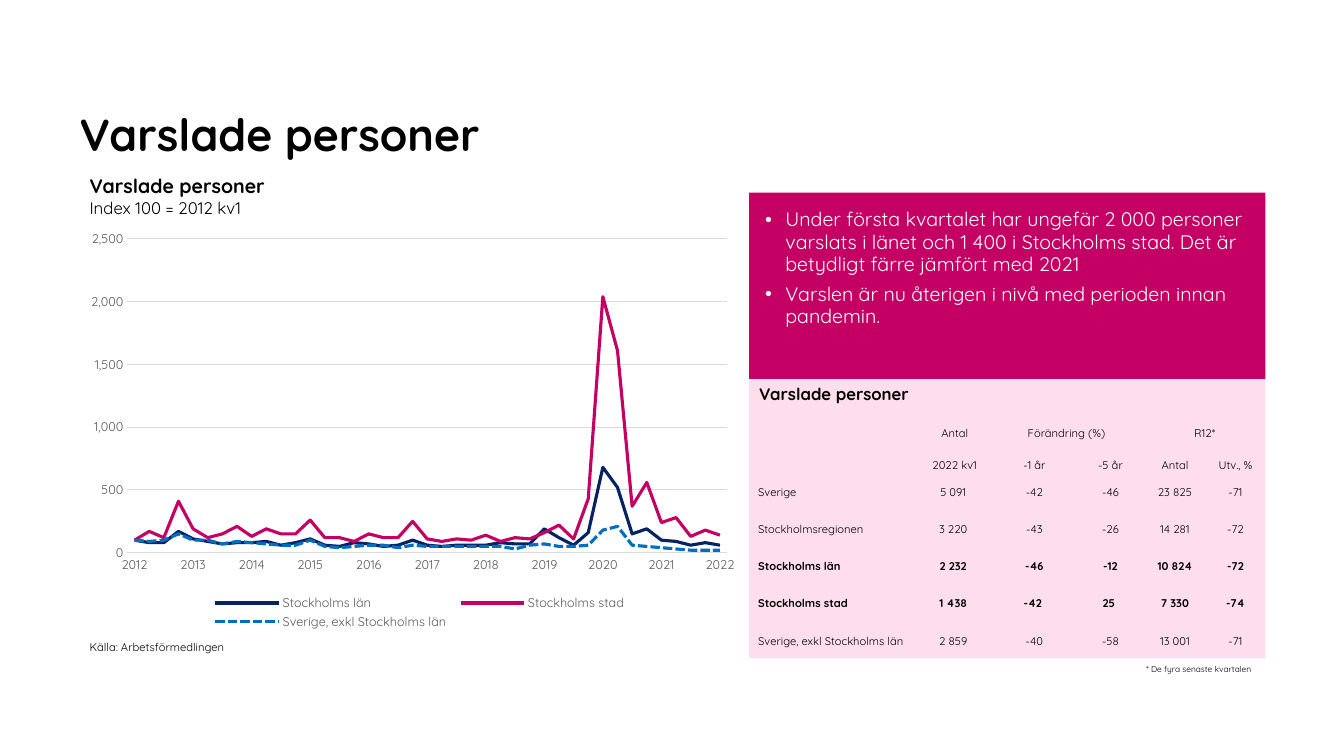
import pptx
import pptx.chart.data
import pptx.dml.color
import pptx.enum.chart
import pptx.enum.dml
import pptx.enum.shapes
import pptx.enum.text
import pptx.util
from lxml import etree
from pptx.oxml.ns import qn
from pptx.util import Inches

COLOURS = {
    "black": "000000", "white": "FFFFFF", "magenta": "C40064", "pink": "FEDEED",
    "navy": "052364", "blue": "006EBF", "grey": "595959", "grid": "D9D9D9",
}
NO_TABLE_STYLE = "{2D5ABB26-0587-4C30-8999-92F81FD0307C}"
ANCHOR = pptx.enum.text.MSO_ANCHOR


def rgb(name):
    return pptx.dml.color.RGBColor.from_string(COLOURS[name])


def add_layout(parent, index, **fractions):
    """Place a chart part by fractions of the chart's size."""
    layout = parent.find(qn("c:layout"))
    if layout is None:
        layout = etree.Element(qn("c:layout"))
        parent.insert(index, layout)
    manual = etree.SubElement(layout, qn("c:manualLayout"))
    if parent.tag == qn("c:plotArea"):
        etree.SubElement(manual, qn("c:layoutTarget"), val="inner")
    for mode in ("xMode", "yMode"):
        etree.SubElement(manual, qn("c:" + mode), val="edge")
    for key, value in fractions.items():
        etree.SubElement(manual, qn("c:" + key), val=str(value))


class SlideBuilder:
    font = "Quicksand"

    def __init__(self, slide):
        self.slide = slide

    def style(self, font, size, colour="black", bold=False):
        font.name, font.size, font.bold = self.font, pptx.util.Pt(size), bold
        font.color.rgb = rgb(colour)

    def run(self, paragraph, text, size, colour="black", bold=False):
        run = paragraph.add_run()
        run.text = text
        self.style(run.font, size, colour, bold)

    def text(self, box, lines, wrap=False, anchor=ANCHOR.TOP, inset=None):
        frame = self.slide.shapes.add_textbox(*map(Inches, box)).text_frame
        frame.word_wrap, frame.vertical_anchor = wrap, anchor
        if inset is not None:
            self.insets(frame, inset)
        paragraph = frame.paragraphs[0]
        for i, (text, size, bold) in enumerate(lines):
            if i:
                paragraph.add_line_break()
            self.run(paragraph, text, size, bold=bold)

    def insets(self, frame, inset):
        frame.margin_left = frame.margin_right = Inches(inset)
        frame.margin_top = frame.margin_bottom = Inches(inset)

    def panel(self, box, colour):
        panel = self.slide.shapes.add_shape(
            pptx.enum.shapes.MSO_SHAPE.RECTANGLE, *map(Inches, box))
        panel.shadow.inherit = False
        panel.fill.solid()
        panel.fill.fore_color.rgb = rgb(colour)
        panel.line.fill.background()
        return panel

    def bullets(self, panel, points, size, colour):
        frame = panel.text_frame
        frame.word_wrap, frame.vertical_anchor = True, ANCHOR.TOP
        self.insets(frame, 0.16)
        for i, point in enumerate(points):
            paragraph = frame.add_paragraph() if i else frame.paragraphs[0]
            paragraph.alignment = pptx.enum.text.PP_ALIGN.LEFT
            paragraph.line_spacing = 0.96
            if i:
                paragraph.space_before = pptx.util.Pt(5)
            properties = paragraph._p.get_or_add_pPr()
            properties.set("marL", str(Inches(0.2)))
            properties.set("indent", str(Inches(-0.2)))
            etree.SubElement(properties, qn("a:buFont"), typeface="Arial")
            etree.SubElement(properties, qn("a:buChar"), char="•")
            self.run(paragraph, point, size, colour)

    def table(self, box, widths, heights, rows, header_rows, bold_rows, spans):
        frame = self.slide.shapes.add_table(len(rows), len(widths), *map(Inches, box))
        table = frame.table
        table.first_row = table.horz_banding = False
        next(frame._element.iter(qn("a:tableStyleId"))).text = NO_TABLE_STYLE
        for column, width in zip(table.columns, widths):
            column.width = Inches(width)
        for row, height in zip(table.rows, heights):
            row.height = Inches(height)
        for r, row in enumerate(rows):
            for c, text in enumerate(row):
                cell = table.cell(r, c)
                cell.fill.background()
                cell.margin_left = cell.margin_right = cell.margin_top = Inches(0.01)
                cell.margin_bottom = 0
                cell.vertical_anchor = ANCHOR.BOTTOM if r < header_rows else ANCHOR.MIDDLE
                paragraph = cell.text_frame.paragraphs[0]
                if c:
                    paragraph.alignment = pptx.enum.text.PP_ALIGN.CENTER
                else:
                    paragraph._p.get_or_add_pPr().set("marL", str(Inches(0.08)))
                if text:
                    self.run(paragraph, text, 8, bold=r in bold_rows)
                else:
                    etree.SubElement(paragraph._p, qn("a:endParaRPr"), sz="800")
        for r, first, last in spans:
            table.cell(r, first).merge(table.cell(r, last))

    def line_chart(self, box, categories, series):
        data = pptx.chart.data.CategoryChartData(number_format="#,##0")
        data.categories = categories
        for name, _, _, values in series:
            data.add_series(name, values)
        chart = self.slide.shapes.add_chart(
            pptx.enum.chart.XL_CHART_TYPE.LINE, *map(Inches, box), data).chart
        self.style(chart.font, 10)
        chart.has_title = False
        chart.plots[0].vary_by_categories = False
        for line, (_, colour, dash, _) in zip(chart.plots[0].series, series):
            line.smooth = False
            line.marker.style = pptx.enum.chart.XL_MARKER_STYLE.NONE
            line.format.line.width = pptx.util.Pt(2.25)
            line.format.line.color.rgb = rgb(colour)
            if dash:
                line.format.line.dash_style = dash

        # Axes
        years, index = chart.category_axis, chart.value_axis
        for axis in (years, index):
            axis.major_tick_mark = axis.minor_tick_mark = pptx.enum.chart.XL_TICK_MARK.NONE
            self.style(axis.tick_labels.font, 9, "grey")
        next(years._element.iter(qn("a:bodyPr"))).set("rot", "-60000000")
        index.minimum_scale, index.maximum_scale, index.major_unit = 0, 2500, 500
        index.tick_labels.number_format = "#,##0"
        index.tick_labels.number_format_is_linked = False
        index.format.line.fill.background()
        for rule in (years.format.line, index.major_gridlines.format.line):
            rule.color.rgb = rgb("grid")
            rule.width = pptx.util.Pt(0.75)

        # Legend and placement
        chart.has_legend = True
        chart.legend.position = pptx.enum.chart.XL_LEGEND_POSITION.BOTTOM
        chart.legend.include_in_layout = False
        self.style(chart.legend.font, 9, "grey")
        plot_area = next(chart._chartSpace.iter(qn("c:plotArea")))
        add_layout(plot_area, 0, x=0.074, y=0.037, w=0.895, h=0.767)
        add_layout(chart.legend._element, 1, x=0.19, y=0.9, w=0.64, h=0.1)


def main():
    deck = pptx.Presentation()
    deck.slide_width, deck.slide_height = Inches(13.33), Inches(7.5)
    page = SlideBuilder(deck.slides.add_slide(deck.slide_layouts[6]))

    # Headings and source
    page.text((0.79, 0.37, 9.22, 1.22), [("Varslade personer", 32, True)],
              wrap=True, anchor=ANCHOR.BOTTOM, inset=0)
    page.text((0.79, 6.3, 1.64, 0.24), [("Källa: Arbetsförmedlingen", 8, False)])
    page.text((0.79, 1.68, 1.94, 0.54),
              [("Varslade personer", 14, True), ("Index 100 = 2012 kv1", 12, False)])

    # Key messages
    page.panel((7.43, 3.75, 5.12, 2.78), "pink")
    messages = page.panel((7.43, 1.91, 5.12, 1.85), "magenta")
    page.bullets(messages, [
        "Under första kvartalet har ungefär 2 000 personer varslats i länet och "
        "1 400 i Stockholms stad. Det är betydligt färre jämfört med 2021",
        "Varslen är nu återigen i nivå med perioden innan pandemin.",
    ], 14, "white")

    # Table
    page.text((7.43, 3.76, 1.69, 0.3), [("Varslade personer", 12, True)])
    page.text((11.27, 6.54, 1.29, 0.2), [("* De fyra senaste kvartalen", 6, False)])
    page.table((7.43, 4.06, 5.12, 2.47), [1.67, 0.74, 0.84, 0.67, 0.61, 0.59],
               [0.31, 0.32] + [0.37] * 5, [
        ["", "Antal", "Förändring (%) ", "", "R12*", ""],
        ["", "2022 kv1", "-1 år", "-5 år", "Antal", "Utv., %"],
        ["Sverige", "5 091 ", "-42", "-46", "23 825", "-71"],
        ["Stockholmsregionen", "3 220 ", "-43", "-26", "14 281", "-72"],
        ["Stockholms län", "2 232 ", "-46", "-12", "10 824", "-72"],
        ["Stockholms stad", "1 438 ", "-42 ", "25 ", "7 330", "-74"],
        ["Sverige, exkl Stockholms län", "2 859 ", "-40", "-58", "13 001", "-71"],
    ], header_rows=2, bold_rows=(4, 5), spans=[(0, 2, 3), (0, 4, 5)])

    # Chart: one point a quarter, labelled at the first quarter of each year
    quarters = ["" if q % 4 else str(2012 + q // 4) for q in range(41)]
    page.line_chart((0.77, 2.22, 6.65, 4.06), quarters, [
        ("Stockholms län", "navy", None, [
            100, 80, 80, 170, 110, 90, 70, 80, 80, 90, 60, 80, 110, 60, 50, 80, 70, 50, 60, 100, 60,
            50, 60, 60, 60, 80, 70, 70, 190, 120, 60, 160, 680, 520, 150, 190, 100, 90, 60, 80, 60]),
        ("Stockholms stad", "magenta", None, [
            100, 170, 120, 410, 190, 120, 150, 210, 130, 190, 150, 150, 260, 120, 120, 90, 150, 120,
            120, 250, 110, 90, 110, 100, 140, 90, 120, 110, 160, 220, 110, 430, 2040, 1610, 370, 560,
            240, 280, 130, 180, 140]),
        ("Sverige, exkl Stockholms län", "blue", pptx.enum.dml.MSO_LINE.SQUARE_DOT, [
            100, 90, 100, 150, 100, 100, 70, 90, 80, 70, 60, 60, 100, 50, 40, 50, 60, 60, 40, 60, 50,
            50, 50, 50, 50, 50, 30, 60, 70, 50, 50, 60, 180, 210, 60, 50, 40, 30, 20, 20, 20]),
    ])
    deck.save("out.pptx")


if __name__ == "__main__":
    main()
